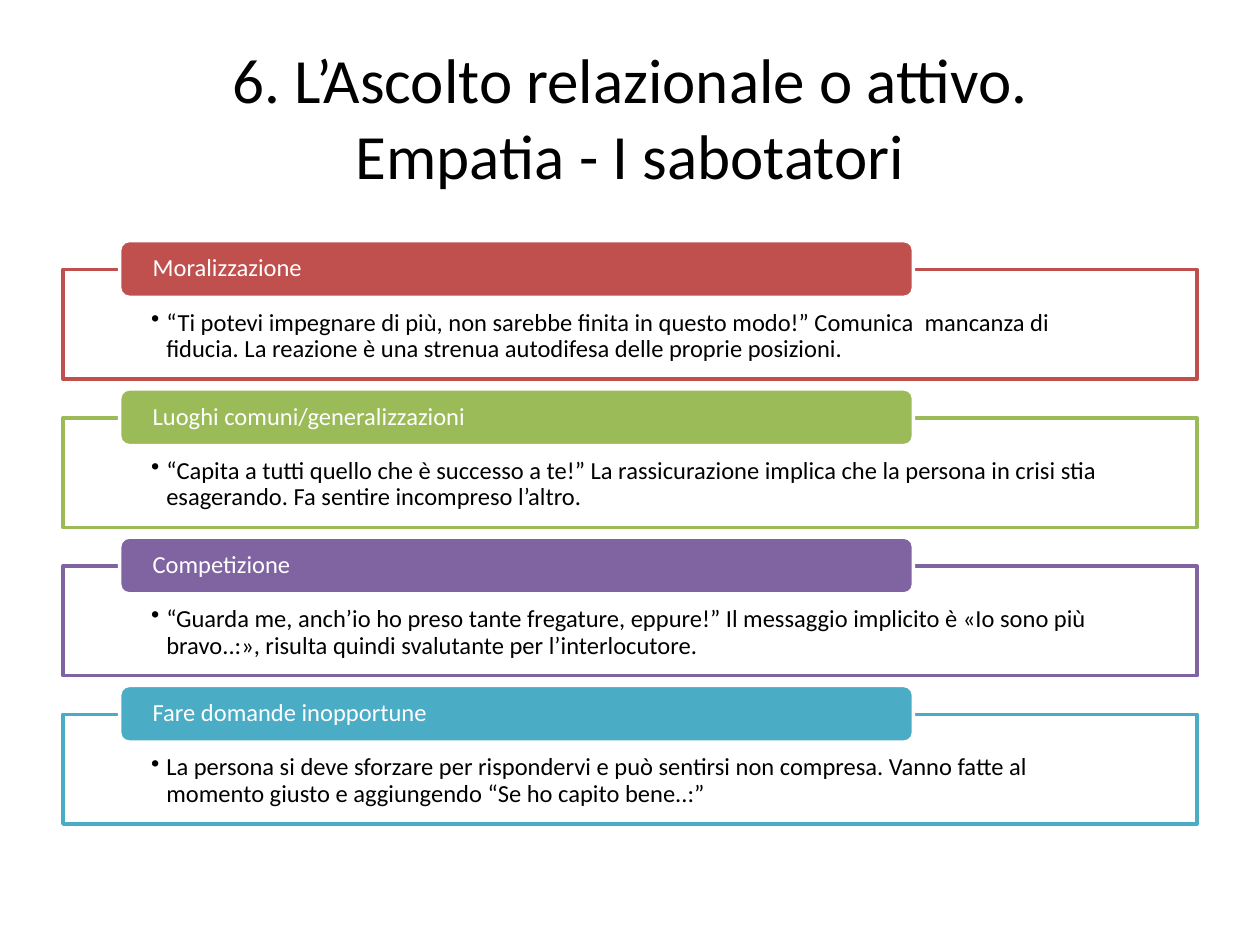
from lxml.etree import SubElement
from pptx import Presentation
from pptx.dml.color import RGBColor
from pptx.enum.shapes import MSO_SHAPE
from pptx.enum.text import MSO_ANCHOR, PP_ALIGN
from pptx.oxml.ns import qn
from pptx.util import Inches, Pt

COLORS = {
    "black": "000000",
    "white": "FFFFFF",
    "red": "C0504D",
    "green": "9BBB59",
    "purple": "8064A2",
    "aqua": "4BACC6",
}

TITLE = "6. L’Ascolto relazionale o attivo.\vEmpatia - I sabotatori"
SABOTEURS = [
    ("red", "Moralizzazione",
     "“Ti potevi impegnare di più, non sarebbe finita in questo modo!” Comunica  mancanza di "
     "fiducia. La reazione è una strenua autodifesa delle proprie posizioni."),
    ("green", "Luoghi comuni/generalizzazioni",
     "“Capita a tutti quello che è successo a te!” La rassicurazione implica che la persona in "
     "crisi stia esagerando. Fa sentire incompreso l’altro."),
    ("purple", "Competizione",
     "“Guarda me, anch’io ho preso tante fregature, eppure!” Il messaggio implicito è «Io sono "
     "più bravo..:», risulta quindi svalutante per l’interlocutore."),
    ("aqua", "Fare domande inopportune",
     "La persona si deve sforzare per rispondervi e può sentirsi non compresa. Vanno fatte al "
     "momento giusto e aggiungendo “Se ho capito bene..:”"),
]
FIRST_TOP, LAST_TOP = 2.14, 5.67
TAB_RISE = 0.23


def rgb(name):
    return RGBColor.from_string(COLORS[name])


class SlideBuilder:
    font = "Calibri"

    def __init__(self, slide):
        self.slide = slide

    def set_text(self, sp, text, size, color, insets, anchor, **paragraph_format):
        """Fill a shape with one paragraph; insets are left, top, right, bottom."""
        tf = sp.text_frame
        sides = ("margin_left", "margin_top", "margin_right", "margin_bottom")
        frame_format = dict(zip(sides, map(Inches, insets)))
        frame_format.update(word_wrap=True, vertical_anchor=anchor)
        for name, value in frame_format.items():
            setattr(tf, name, value)
        p = tf.paragraphs[0]
        p.text = text
        for name, value in paragraph_format.items():
            setattr(p, name, value)
        for r in p.runs:
            r.font.name, r.font.size = self.font, Pt(size)
            r.font.color.rgb = rgb(color)
        return p

    def shape(self, kind, box, fill, line):
        sp = self.slide.shapes.add_shape(kind, *map(Inches, box))
        sp.shadow.inherit = False
        sp.fill.solid()
        sp.fill.fore_color.rgb = rgb(fill)
        sp.line.color.rgb = rgb(line)
        sp.line.width = Pt(2)
        return sp

    def title(self, text):
        box = (0.5, 0.3, 9, 1.25)
        sp = self.slide.shapes.add_textbox(*map(Inches, box))
        self.set_text(sp, text, 36, "black", (0.1, 0.05, 0.1, 0.05), MSO_ANCHOR.MIDDLE,
                      alignment=PP_ALIGN.CENTER)

    def panel(self, top, color, text):
        """Outlined box holding one bulleted paragraph."""
        sp = self.shape(MSO_SHAPE.RECTANGLE, (0.5, top, 9, 0.87), "white", color)
        fill_color = sp._element.spPr.find(qn("a:solidFill"))[0]
        SubElement(fill_color, qn("a:alpha"), val="90000")
        p = self.set_text(sp, text, 14, "black", (0.7, 0.32, 0.7, 0.11), MSO_ANCHOR.TOP,
                          alignment=PP_ALIGN.LEFT, line_spacing=0.9)
        pPr = p._p.get_or_add_pPr()
        pPr.set("marL", str(Inches(0.12)))
        pPr.set("indent", str(-Inches(0.12)))
        SubElement(pPr, qn("a:buChar"), char="•")

    def tab(self, top, color, text):
        """Rounded heading that overlaps the top edge of a panel."""
        sp = self.shape(MSO_SHAPE.ROUNDED_RECTANGLE, (0.95, top, 6.3, 0.45), color, "white")
        self.set_text(sp, text, 14, "white", (0.24, 0, 0.24, 0), MSO_ANCHOR.MIDDLE,
                      alignment=PP_ALIGN.LEFT, line_spacing=0.9)


def main():
    prs = Presentation()
    prs.slide_width, prs.slide_height = Inches(10), Inches(7.5)
    s = SlideBuilder(prs.slides.add_slide(prs.slide_layouts[6]))
    s.title(TITLE)
    pitch = (LAST_TOP - FIRST_TOP) / (len(SABOTEURS) - 1)
    for i, (color, heading, text) in enumerate(SABOTEURS):
        top = FIRST_TOP + i * pitch
        s.panel(top, color, text)
        s.tab(top - TAB_RISE, color, heading)
    prs.save("out.pptx")


if __name__ == "__main__":
    main()
